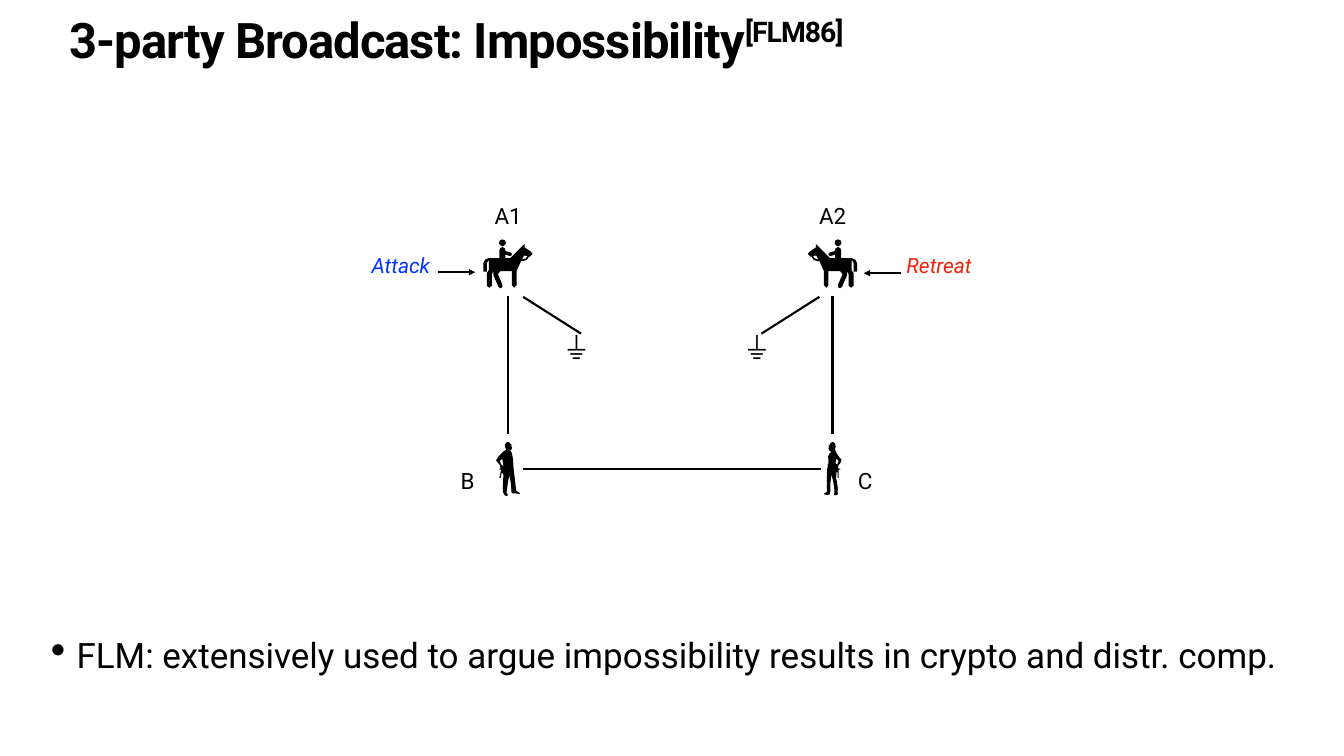
from dataclasses import dataclass

from lxml.etree import SubElement
from pptx import Presentation
from pptx.dml.color import RGBColor
from pptx.enum.shapes import MSO_CONNECTOR
from pptx.enum.text import MSO_ANCHOR, MSO_AUTO_SIZE, PP_ALIGN
from pptx.oxml.ns import qn
from pptx.util import Pt

SCALE = 9144  # EMU per px, 100 px to the inch


@dataclass(frozen=True)
class Theme:
    ink: str = "000000"
    blue: str = "0433FF"
    red: str = "EE230C"
    font: str = "Roboto"
    sign: str = "Arial"
    head: int = 70
    body: int = 50
    ground: int = 43
    name: int = 32
    order: int = 30
    line: int = 3
    pad: int = 6


# Outlines: each is a list of closed rings, px from the top left corner
RIDER = [
    [(38, 0), (33, 2), (31, 7), (33, 11), (38, 14), (43, 11), (45, 7), (43, 2)],
    [(82, 9), (54, 37), (44, 37), (44, 30), (52, 33), (56, 32), (57, 29),
     (54, 26), (44, 23), (43, 18), (38, 15), (33, 18), (32, 22), (32, 37),
     (11, 37), (4, 40), (0, 47), (0, 64), (7, 64), (7, 47), (10, 42),
     (11, 42), (11, 61), (7, 67), (7, 92), (12, 96), (17, 92), (17, 69),
     (20, 63), (20, 71), (30, 94), (34, 97), (38, 95), (38, 90), (29, 69),
     (34, 63), (57, 63), (57, 91), (61, 96), (66, 91), (66, 63), (75, 43),
     (78, 43), (86, 41), (91, 34), (93, 34), (98, 29), (94, 24), (82, 16)],
    [(81, 32), (88, 33), (84, 38), (77, 40)],
]
LEFT_MAN = [
    [(25, 0), (27, 1), (30, 5), (33, 6), (30, 7), (32, 11), (31, 15),
     (28, 17), (31, 20), (34, 33), (35, 51), (37, 68), (40, 94), (40, 96),
     (44, 99), (48, 102), (47, 103), (38, 102), (33, 102), (31, 100),
     (30, 84), (27, 66), (24, 79), (22, 94), (21, 101), (23, 103),
     (24, 106), (20, 107), (17, 105), (14, 99), (14, 87), (15, 64),
     (12, 61), (11, 62), (10, 71), (7, 71), (10, 57), (9, 54), (6, 55),
     (9, 52), (8, 46), (0, 36), (3, 33), (5, 29), (16, 18), (20, 16),
     (20, 14), (18, 10), (18, 5), (21, 1)],
    [(12, 34), (8, 37), (10, 44), (13, 47), (15, 47), (13, 35)],
]
RIGHT_MAN = [
    [(18, 0), (22, 3), (23, 8), (24, 10), (22, 11), (22, 14), (23, 17),
     (25, 22), (31, 31), (35, 35), (33, 41), (28, 48), (28, 51), (33, 55),
     (29, 55), (29, 71), (27, 71), (27, 60), (25, 60), (24, 72), (26, 79),
     (28, 95), (27, 99), (28, 104), (21, 106), (20, 104), (21, 99),
     (20, 88), (18, 77), (15, 64), (13, 80), (13, 97), (12, 102),
     (12, 104), (6, 105), (0, 104), (1, 102), (6, 99), (6, 55), (8, 47),
     (7, 46), (9, 43), (9, 36), (8, 29), (12, 22), (14, 20), (13, 18),
     (10, 17), (9, 12), (11, 10), (9, 8), (11, 6), (13, 3), (15, 1)],
    [(25, 33), (23, 41), (24, 44), (27, 44), (29, 38), (27, 35)],
]


class Deck:
    def __init__(self, theme, wide, high):
        self.theme = theme
        self.show = Presentation()
        self.show.slide_width = wide * SCALE
        self.show.slide_height = high * SCALE
        self.slide = self.show.slides.add_slide(self.show.slide_layouts[5])
        self.shapes = self.slide.shapes

    def frame(self, shape, anchor, wrap):
        frame = shape.text_frame
        frame.auto_size = MSO_AUTO_SIZE.NONE
        frame.word_wrap = wrap
        frame.vertical_anchor = anchor
        pad = self.theme.pad * SCALE
        frame.margin_left = frame.margin_right = pad
        frame.margin_top = frame.margin_bottom = pad
        return frame

    def style(self, run, size, color=None, font=None, bold=False, slant=False):
        face = run.font
        face.size = Pt(size)
        face.name = font or self.theme.font
        face.bold, face.italic = bold, slant
        face.color.rgb = RGBColor.from_string(color or self.theme.ink)

    def title(self, text, cite, box):
        shape = self.shapes.title
        shape.left, shape.top, shape.width, shape.height = [
            n * SCALE for n in box]
        para = self.frame(shape, MSO_ANCHOR.TOP, True).paragraphs[0]
        para.text = text
        para.add_run().text = cite
        para.alignment = PP_ALIGN.LEFT
        para.line_spacing = 0.8
        for run in para.runs:
            self.style(run, self.theme.head, bold=True)
            run.font._element.set("spc", "-140")
        run.font._element.set("baseline", "32000")

    def text(self, text, box, size, align=PP_ALIGN.CENTER, wrap=False, **look):
        shape = self.shapes.add_textbox(*[n * SCALE for n in box])
        para = self.frame(shape, MSO_ANCHOR.MIDDLE, wrap).paragraphs[0]
        para.text = text
        para.alignment = align
        self.style(para.runs[0], size, **look)
        return para

    def bullet(self, text, box, indent):
        para = self.text(text, box, self.theme.body, PP_ALIGN.LEFT, True)
        para.line_spacing = 0.9
        props = para._p.get_or_add_pPr()
        props.set("marL", str(indent * SCALE))
        props.set("indent", str(-indent * SCALE))
        SubElement(props, qn("a:buSzPct"), val="123000")
        SubElement(props, qn("a:buChar"), char="•")

    def line(self, start, end, arrow=False):
        ends = [n * SCALE for n in (*start, *end)]
        link = self.shapes.add_connector(MSO_CONNECTOR.STRAIGHT, *ends)
        link.line.width = Pt(self.theme.line)
        link.line.color.rgb = RGBColor.from_string(self.theme.ink)
        if arrow:
            SubElement(link.line._get_or_add_ln(), qn("a:tailEnd"),
                       type="triangle")
        SubElement(link._element.spPr, qn("a:effectLst"))

    def figure(self, rings, left, top, flip=False):
        if flip:
            wide = max(x for ring in rings for x, _ in ring)
            rings = [[(wide - x, y) for x, y in ring] for ring in rings]
        pen = self.shapes.build_freeform(*rings[0][0], scale=SCALE)
        for ring in rings:
            if ring is not rings[0]:
                pen.move_to(*ring[0])
            pen.add_line_segments(ring[1:], close=True)
        shape = pen.convert_to_shape(left * SCALE, top * SCALE)
        shape.shadow.inherit = False
        shape.fill.solid()
        shape.fill.fore_color.rgb = RGBColor.from_string(self.theme.ink)
        shape.line.fill.background()


def main():
    theme = Theme()
    deck = Deck(theme, 2667, 1500)
    deck.title("3-party Broadcast: Impossibility", "[FLM86]",
               (132, 35, 2403, 157))

    # Generals on horseback, each with a link down to a man
    for name, mid, left, flip in (("A1", 1008, 959, False),
                                  ("A2", 1652, 1603, True)):
        deck.figure(RIDER, left, 475, flip)
        deck.text(name, (mid - 33, 395, 67, 64), theme.name)
        deck.line((mid, 861), (mid, 588))

    # Men on foot and the link between them
    for name, rings, left, label in (("B", LEFT_MAN, 984, 906),
                                     ("C", RIGHT_MAN, 1635, 1695)):
        deck.figure(rings, left, 877)
        deck.text(name, (label, 922, 44, 64), theme.name)
    deck.line((1037, 930), (1630, 930))

    # Grounded links
    for near, far, left in ((1038, 1153, 1117), (1626, 1511, 1475)):
        deck.text("⏚", (left, 642, 72, 96), theme.ground, PP_ALIGN.LEFT,
                  font=theme.sign)
        deck.line((far, 662), (near, 589))

    # Orders given to the generals
    for order, color, left, wide, start, end, y in (
            ("Attack", theme.blue, 730, 131, 870, 943, 540),
            ("Retreat", theme.red, 1790, 147, 1787, 1714, 542)):
        deck.line((start, y), (end, y), arrow=True)
        deck.text(order, (left, 497, wide, 60), theme.order, color=color,
                  slant=True)

    # Closing remark
    deck.bullet("FLM: extensively used to argue impossibility results in "
                "crypto and distr. comp.", (95, 1257, 2476, 93), 51)
    deck.show.save("out.pptx")


if __name__ == "__main__":
    main()
